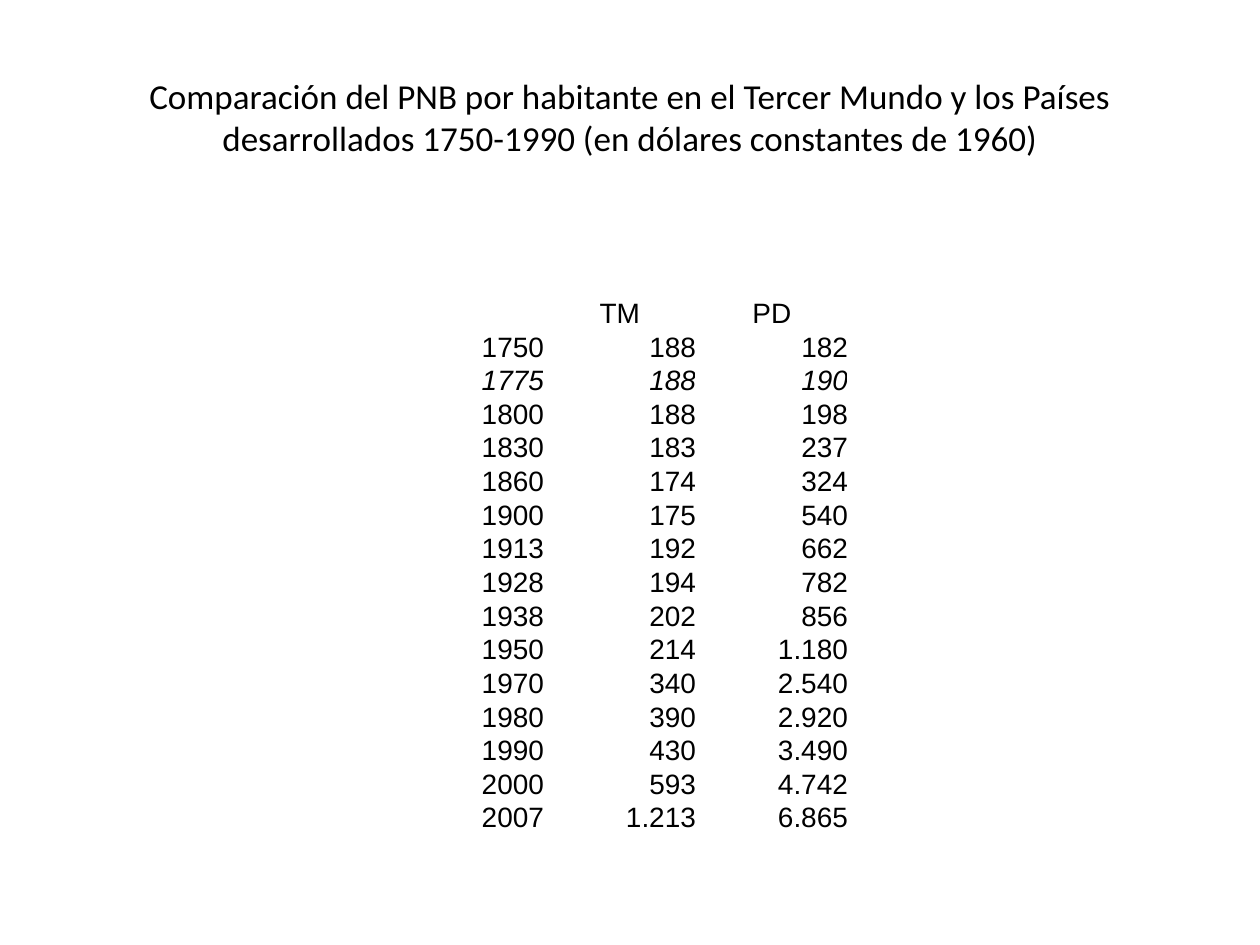
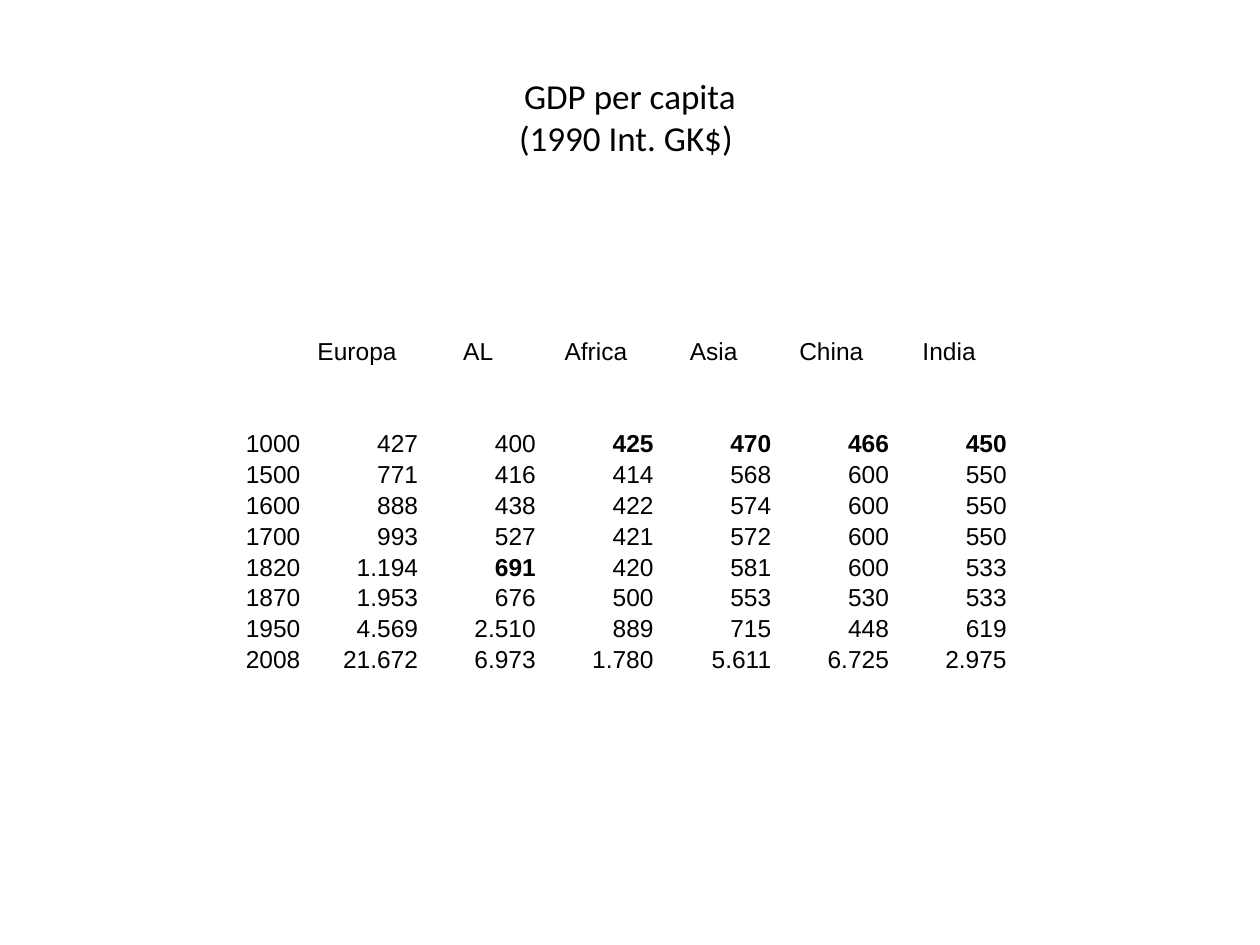
from lxml.etree import SubElement
from pptx import Presentation
from pptx.dml.color import RGBColor
from pptx.enum.text import MSO_ANCHOR as Anchor, MSO_AUTO_SIZE as AutoSize, PP_ALIGN as Align
from pptx.oxml.ns import qn
from pptx.util import Inches, Pt

BLACK = "000000"
TITLE_FONT = "Calibri"
TABLE_FONT = "Arial"
TITLE_BOX = (0.5, 0.54, 9, 0.77)

INCOME_TITLE = [
    "Comparación del PNB por habitante en el Tercer Mundo y los Países "
    "desarrollados 1750-1990 (en dólares constantes de 1960)"
]
INCOME_ROWS = [
    ["", "", ""],
    ["", "TM", "PD"],
    ["1750", "188", "182"],
    ["1775", "188", "190"],
    ["1800", "188", "198"],
    ["1830", "183", "237"],
    ["1860", "174", "324"],
    ["1900", "175", "540"],
    ["1913", "192", "662"],
    ["1928", "194", "782"],
    ["1938", "202", "856"],
    ["1950", "214", "1.180"],
    ["1970", "340", "2.540"],
    ["1980", "390", "2.920"],
    ["1990", "430", "3.490"],
    ["2000", "593", "4.742"],
    ["2007", "1.213", "6.865"],
]
ITALIC_CELLS = {(3, column) for column in range(3)}

REGION_TITLE = ["GDP per capita", "(1990 Int. GK$) "]
REGION_ROWS = [
    ["", "Europa ", "AL", "Africa", "Asia", "China", "India"],
    [""] * 7,
    [""] * 7,
    ["1000", "427", "400", "425", "470", "466", "450"],
    ["1500", "771", "416", "414", "568", "600", "550"],
    ["1600", "888", "438", "422", "574", "600", "550"],
    ["1700", "993", "527", "421", "572", "600", "550"],
    ["1820", "1.194", "691", "420", "581", "600", "533"],
    ["1870", "1.953", "676", "500", "553", "530", "533"],
    ["1950", "4.569", "2.510", "889", "715", "448", "619"],
    ["2008", "21.672", "6.973", "1.780", "5.611", "6.725", "2.975"],
]
BOLD_CELLS = {(3, column) for column in range(3, 7)} | {(7, 2)}


def color(value):
    return RGBColor.from_string(value)


def write(para, text, size, font, align=Align.CENTER, bold=False, italic=False):
    para.alignment = align
    if not text:
        SubElement(para._p, qn("a:endParaRPr"), sz=str(size * 100))
        return
    span = para.add_run()
    span.text = text
    span.font.size = Pt(size)
    span.font.name = font
    span.font.bold = bold
    span.font.italic = italic
    span.font.color.rgb = color(BLACK)


def add_title(page, lines, box=TITLE_BOX):
    frame = page.shapes.add_textbox(*map(Inches, box)).text_frame
    frame.word_wrap = True
    frame.auto_size = AutoSize.SHAPE_TO_FIT_TEXT
    frame.vertical_anchor = Anchor.MIDDLE
    for index, line in enumerate(lines):
        para = frame.add_paragraph() if index else frame.paragraphs[0]
        write(para, line, size=20, font=TITLE_FONT)


def add_figures(page, rows, box, size, inset=0, first_height=None, bold=(), italic=()):
    left, top, width, height = box
    frame = page.shapes.add_table(len(rows), len(rows[0]), *map(Inches, box))
    table = frame.table
    table.first_row = False
    table.horz_banding = False
    first_height = first_height or height / len(rows)
    row_height = (height - first_height) / (len(rows) - 1)
    for column in table.columns:
        column.width = Inches(width / len(rows[0]))
    for r, values in enumerate(rows):
        table.rows[r].height = Inches(row_height if r else first_height)
        for c, text in enumerate(values):
            cell = table.cell(r, c)
            cell.fill.background()
            cell.vertical_anchor = Anchor.BOTTOM
            cell.margin_left = cell.margin_right = cell.margin_top = Inches(inset)
            cell.margin_bottom = 0
            write(
                cell.text_frame.paragraphs[0], text, size=size, font=TABLE_FONT,
                align=Align.RIGHT if values[0] else Align.CENTER,
                bold=(r, c) in bold, italic=(r, c) in italic,
            )
    return table


def income_slide(page):
    add_title(page, INCOME_TITLE)
    table = add_figures(page, INCOME_ROWS, (3.11, 2.08, 3.62, 4.53), size=16, italic=ITALIC_CELLS)
    table.cell(0, 0).merge(table.cell(0, 2))


def region_slide(page):
    add_figures(
        page, REGION_ROWS, (1.46, 2.25, 6.54, 3.1), size=14,
        inset=0.01, first_height=0.65, bold=BOLD_CELLS,
    )
    add_title(page, REGION_TITLE)


def main():
    deck = Presentation()
    deck.slide_width = Inches(10)
    deck.slide_height = Inches(7.5)
    for build in (income_slide, region_slide):
        build(deck.slides.add_slide(deck.slide_layouts[6]))
    deck.save("out.pptx")


if __name__ == "__main__":
    main()
